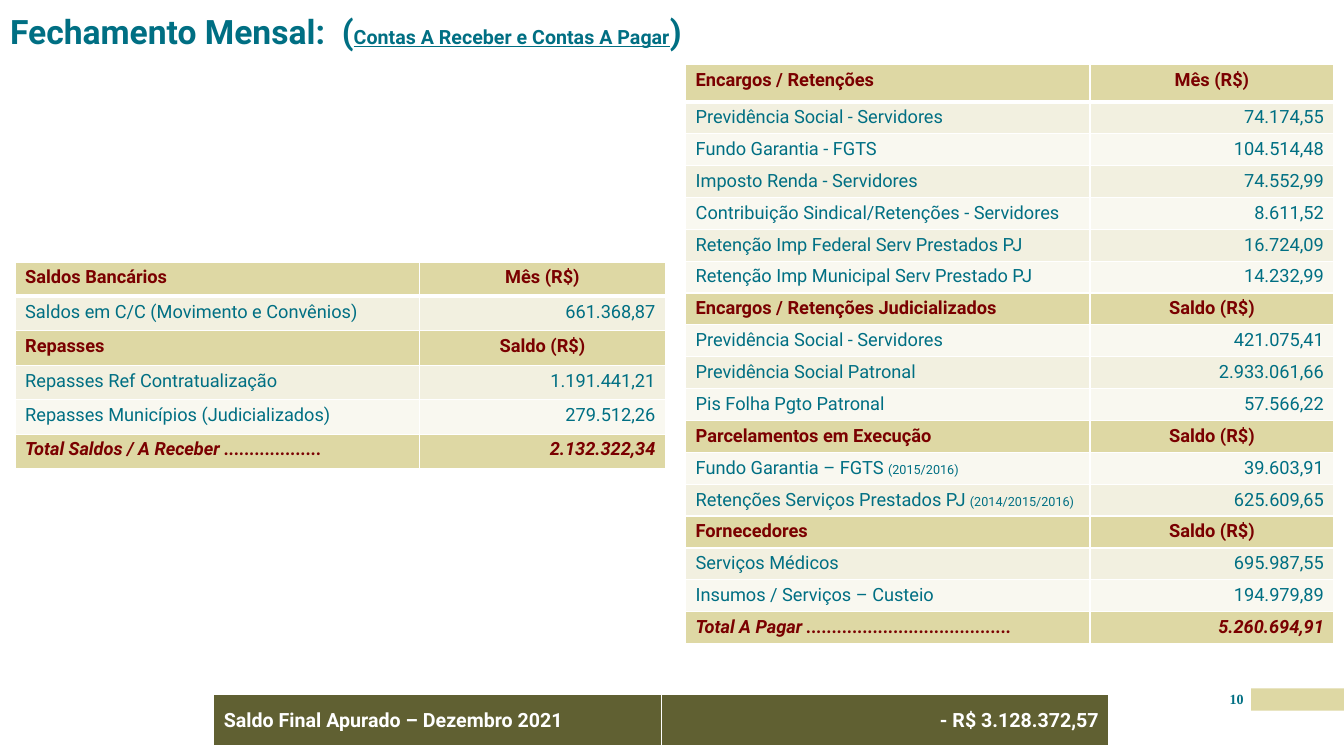
"""Build the monthly closing slide: balances receivable, payable and the final result."""
import pptx
import pptx.util
import pptx.dml.color
import pptx.enum.shapes
import pptx.enum.text
import pptx.oxml
import pptx.oxml.ns

Inches, Pt = pptx.util.Inches, pptx.util.Pt
RGB = pptx.dml.color.RGBColor
Align = pptx.enum.text.PP_ALIGN
Anchor = pptx.enum.text.MSO_ANCHOR

TEAL = RGB(0x00, 0x6F, 0x83)
WINE = RGB(0x7A, 0x00, 0x00)
SAND = RGB(0xDE, 0xD8, 0xA4)
CREAM = RGB(0xF2, 0xF0, 0xE0)
IVORY = RGB(0xF9, 0xF8, 0xF0)
OLIVE = RGB(0x60, 0x60, 0x32)
WHITE = RGB(0xFF, 0xFF, 0xFF)

MONTH, OPEN = "Mês (R$)", "Saldo (R$)"
PAY = [
    ("Encargos / Retenções", MONTH),
    ("Previdência Social - Servidores", "74.174,55"),
    ("Fundo Garantia - FGTS", "104.514,48"),
    ("Imposto Renda - Servidores", "74.552,99"),
    ("Contribuição Sindical/Retenções - Servidores", "8.611,52"),
    ("Retenção Imp Federal Serv Prestados PJ", "16.724,09"),
    ("Retenção Imp Municipal Serv Prestado PJ", "14.232,99"),
    ("Encargos / Retenções Judicializados", OPEN),
    ("Previdência Social - Servidores", "421.075,41"),
    ("Previdência Social Patronal", "2.933.061,66"),
    ("Pis Folha Pgto Patronal", "57.566,22"),
    ("Parcelamentos em Execução", OPEN),
    ("Fundo Garantia – FGTS (2015/2016)", "39.603,91"),
    ("Retenções Serviços Prestados PJ (2014/2015/2016)", "625.609,65"),
    ("Fornecedores", OPEN),
    ("Serviços Médicos", "695.987,55"),
    ("Insumos / Serviços – Custeio", "194.979,89"),
    ("Total A Pagar ........................................", "5.260.694,91"),
]
CASH = [
    ("Saldos Bancários", MONTH),
    ("Saldos em C/C (Movimento e Convênios)", "661.368,87"),
    ("Repasses", OPEN),
    ("Repasses Ref Contratualização", "1.191.441,21"),
    ("Repasses Municípios (Judicializados)", "279.512,26"),
    ("Total Saldos / A Receber ...................", "2.132.322,34"),
]
FINAL = [("Saldo Final Apurado – Dezembro 2021", "- R$ 3.128.372,57")]


def write(frame, text, size=13, color=TEAL, bold=False, slant=False,
          line=False, align=Align.LEFT, font="Roboto"):
    """Append one formatted run to the first paragraph of a text frame."""
    para = frame.paragraphs[0]
    para.alignment = align
    run = para.add_run()
    run.text = text
    run.font.name, run.font.size = font, Pt(size)
    run.font.bold, run.font.italic, run.font.underline = bold, slant, line
    run.font.color.rgb = color


def paint(cell, color, top, base):
    """Fill a cell and give it white borders."""
    cell.fill.solid()
    cell.fill.fore_color.rgb = color
    props = cell._tc.get_or_add_tcPr()
    sides = (("lnL", 1), ("lnR", 1), ("lnT", top), ("lnB", base))
    for spot, (side, width) in enumerate(sides):
        props.insert(spot, pptx.oxml.parse_xml(
            f'<a:{side} {pptx.oxml.ns.nsdecls("a")} w="{Pt(width)}">'
            f'<a:solidFill><a:srgbClr val="{WHITE}"/></a:solidFill></a:{side}>'))


deck = pptx.Presentation()
deck.slide_width, deck.slide_height = Inches(13.33), Inches(7.5)
slide = deck.slides.add_slide(deck.slide_layouts[5])

title = slide.shapes.title
title.left, title.top = Inches(0.1), Inches(0.15)
title.width, title.height = Inches(13.01), Inches(0.5)
bar = slide.shapes.add_shape(pptx.enum.shapes.MSO_SHAPE.RECTANGLE,
                             Inches(12.41), Inches(6.83), Inches(0.92), Inches(0.22))
bar.shadow.inherit = False
bar.fill.solid()
bar.fill.fore_color.rgb = SAND
bar.line.fill.background()
page = slide.shapes.add_textbox(Inches(12.12), Inches(6.85), Inches(0.29), Inches(0.25))

for frame in (title.text_frame, page.text_frame):
    frame.margin_left = frame.margin_right = frame.margin_top = frame.margin_bottom = 0
    frame.word_wrap = True
    frame.auto_size = pptx.enum.text.MSO_AUTO_SIZE.NONE
    frame.vertical_anchor = Anchor.TOP
head = title.text_frame
head.paragraphs[0].line_spacing = 0.9
write(head, "Fechamento Mensal:  (", size=24, bold=True)
write(head, "Contas A Receber e Contas A Pagar", size=14, bold=True, line=True)
write(head, ")", size=24, bold=True)
write(page.text_frame, "10", size=10, bold=True, align=Align.CENTER, font="Times New Roman")

tables = [
    (PAY, 6.8, 0.64, (4.01, 2.42), 0.37, 5.75),
    (CASH, 0.15, 2.6, (4.01, 2.44), 0.34, 2.05),
    (FINAL, 2.12, 6.89, (4.44, 4.44), 0.52, 0.52),
]
for rows, left, top, cols, first, high in tables:
    grid = slide.shapes.add_table(len(rows), 2, Inches(left), Inches(top),
                                  Inches(sum(cols)), Inches(high)).table
    grid.first_row = grid.horz_banding = False
    for col, width in zip(grid.columns, cols):
        col.width = Inches(width)
    for num, (label, value) in enumerate(rows):
        grid.rows[num].height = Inches((high - first) / (len(rows) - 1) if num else first)
        group, total = value in (MONTH, OPEN), label.startswith("Total")
        look = dict(color=WINE if group or total else TEAL, bold=group or total, slant=total)
        fill = SAND if group or total else CREAM if num % 2 else IVORY
        if rows is FINAL:
            look, fill = dict(color=WHITE, bold=True, size=14), OLIVE
        name, cost = grid.cell(num, 0), grid.cell(num, 1)
        for cell in (name, cost):
            paint(cell, fill, 3 if num == 1 else 1, 1 if num else 3)
            cell.vertical_anchor = Anchor.MIDDLE if rows is FINAL else Anchor.TOP
        text, mark, years = label.partition("(20")
        write(name.text_frame, text, **look)
        if mark:
            write(name.text_frame, mark + years, size=9)
        write(cost.text_frame, value, align=Align.CENTER if group else Align.RIGHT, **look)

deck.save("out.pptx")
